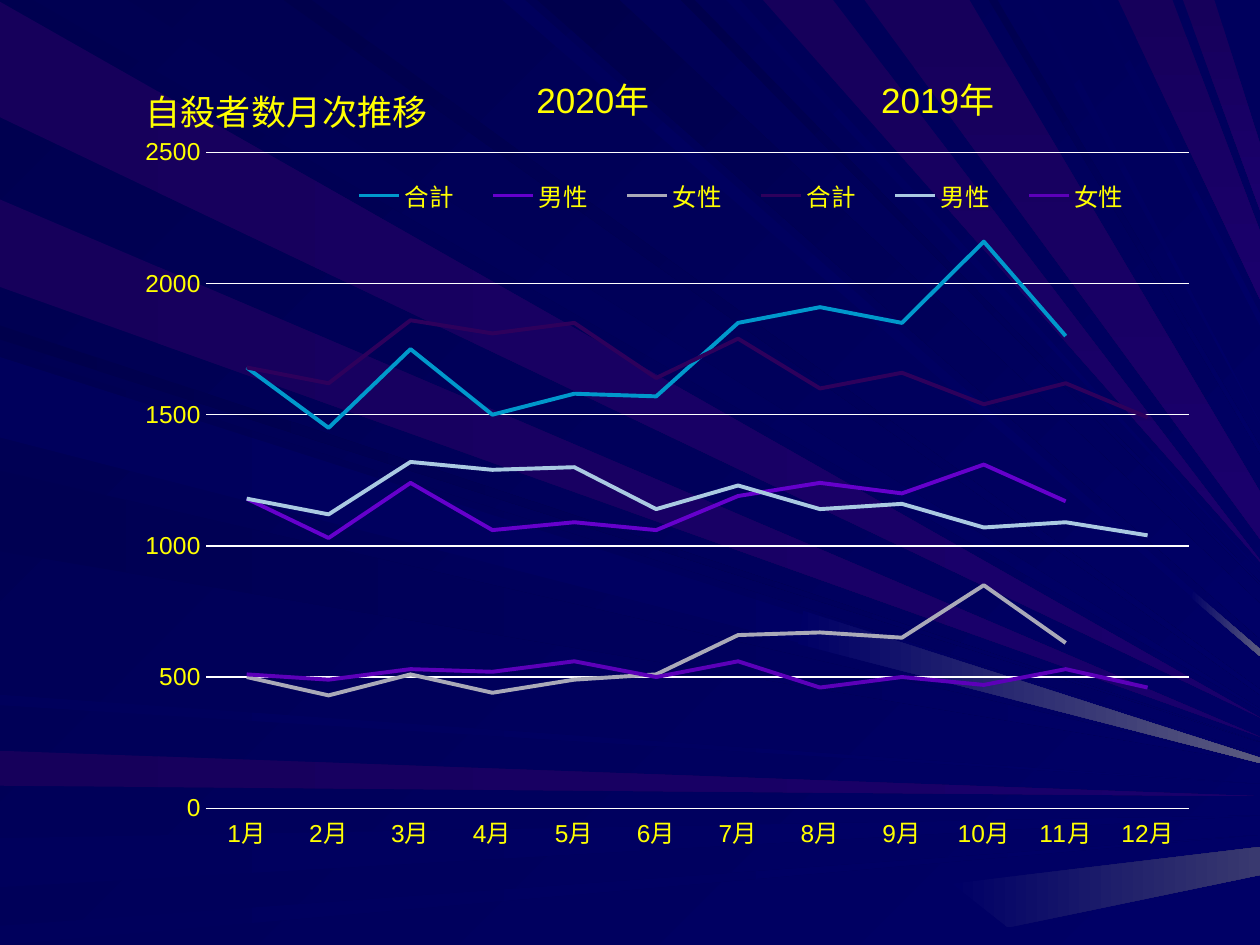
from lxml import etree
from pptx import Presentation
from pptx.chart.data import CategoryChartData
from pptx.dml.color import RGBColor
from pptx.enum.chart import XL_CHART_TYPE, XL_LEGEND_POSITION, XL_TICK_MARK
from pptx.enum.text import MSO_ANCHOR
from pptx.oxml import parse_xml
from pptx.oxml.ns import nsdecls, qn
from pptx.util import Pt

LINE_CHART = XL_CHART_TYPE.LINE
LEGEND_BOTTOM = XL_LEGEND_POSITION.BOTTOM
NO_TICK = XL_TICK_MARK.NONE
MIDDLE = MSO_ANCHOR.MIDDLE

WIDTH, HEIGHT = 720, 540
FONT = "Arial"
COLORS = {
    "text": "FFFF00", "grid": "FFFFFF", "night": "000050",
    "navy": "000066", "purple": "1A006C", "slate": "5A5A7F", "steel": "39396F",
    "dark navy": "00004C", "deep navy": "000052", "mid navy": "00005C",
    "dark purple": "16005B",
}

# Rays from the left edge: start colour, end colour, top, bottom, height of the tip
LEFT_RAYS = [
    ("dark purple", "purple", 1, 67, 410),
    ("dark purple", "purple", 429, 449, 455),
    ("mid navy", "navy", 479, 507, 466),
    ("mid navy", "navy", 529, 540, 477),
    ("dark navy", "navy", 186, 194, 424),
    ("dark purple", "purple", 114, 164, 421),
    ("deep navy", "navy", 200, 246, 431),
    ("deep navy", "navy", 269, 315, 436),
    ("mid navy", "navy", 397, 403, 448),
    ("mid navy", "navy", 204, 250, 435),
]
# Rays from the top edge: start colour, end colour, left, right, upper and lower tip
TOP_RAYS = [
    ("deep navy", "navy", 19, 73, 405, 406),
    ("mid navy", "navy", 287, 300, 371, 375),
    ("dark navy", "navy", 307, 354, 345, 365),
    ("dark navy", "navy", 389, 397, 333, 334),
    ("dark purple", "purple", 436, 476, 320, 321),
    ("dark purple", "purple", 639, 670, 132, 171),
    ("dark purple", "purple", 676, 694, 82, 120),
    ("dark navy", "navy", 162, 178, 394, 397),
    ("mid navy", "navy", 415, 423, 326, 327),
    ("dark purple", "purple", 494, 554, 281, 308),
    ("night", "navy", 565, 570, 255, 259),
    ("mid navy", "navy", 587, 593, 241, 242),
    ("mid navy", "navy", 623, 628, 179, 186),
]
# Pale ray ends: end colour, corners
GLINTS = [
    ("slate", [(459, 349), (456, 368), (WIDTH, 436), (WIDTH, 433)]),
    ("steel", [(544, 505), (576, 530), (WIDTH, 500), (WIDTH, 484)]),
    ("slate", [(682, 338), (680, 341), (WIDTH, 375), (WIDTH, 371)]),
]

TITLE = "自殺者数月次推移"
YEARS = [("2020年", 306.5), ("2019年", 503.5)]  # label, left edge
MONTHS = [f"{month}月" for month in range(1, 13)]
SERIES = [
    ("合計", "0099CC", [1680, 1450, 1750, 1500, 1580, 1570, 1850, 1910, 1850, 2160, 1800, None]),
    ("男性", "6600CC", [1180, 1030, 1240, 1060, 1090, 1060, 1190, 1240, 1200, 1310, 1170, None]),
    ("女性", "AAAAB8", [500, 430, 510, 440, 490, 510, 660, 670, 650, 850, 630, None]),
    ("合計", "2E005C", [1680, 1620, 1860, 1810, 1850, 1640, 1790, 1600, 1660, 1540, 1620, 1490]),
    ("男性", "AACAE2", [1180, 1120, 1320, 1290, 1300, 1140, 1230, 1140, 1160, 1070, 1090, 1040]),
    ("女性", "5C00B9", [510, 490, 530, 520, 560, 500, 560, 460, 500, 470, 530, 460]),
]
CHART_BOX = (41, 23, 638.6, 493.2)
LAYOUTS = {  # fractions of the chart box
    "c:title": {"x": 0.06, "y": 0.04},
    "c:legend": {"x": 0.23, "y": 0.15, "w": 0.74, "h": 0.06},
    "c:plotArea": {"x": 0.12, "y": 0.13, "w": 0.88, "h": 0.76},
}


def rgb(value):
    return RGBColor.from_string(value)


def set_font(font, size):
    font.name, font.size, font.bold = FONT, Pt(size), False
    font.color.rgb = rgb(COLORS["text"])


def set_gradient(fill, start, end, angle):
    """Fill from one named colour to another; the angle runs clockwise."""
    fill.gradient()
    fill.gradient_angle = (360 - angle) % 360
    for stop, name in zip(fill.gradient_stops, (start, end)):
        stop.color.rgb = rgb(COLORS[name])


def add_ray(slide, start, end, angle, corners):
    points = [(Pt(x), Pt(y)) for x, y in corners]
    builder = slide.shapes.build_freeform(*points[0])
    builder.add_line_segments(points[1:], close=True)
    ray = builder.convert_to_shape()
    ray.shadow.inherit = False
    ray.line.fill.background()
    set_gradient(ray.fill, start, end, angle)


def add_background(slide):
    set_gradient(slide.background.fill, "night", "navy", 45)
    for start, end, left, right, upper, lower in TOP_RAYS:
        corners = [(left, 0), (right, 0), (WIDTH, upper), (WIDTH, lower)]
        add_ray(slide, start, end, 90 if end == "purple" else 45, corners)
    for start, end, top, bottom, tip in LEFT_RAYS:
        add_ray(slide, start, end, 0, [(0, top), (0, bottom), (WIDTH, tip)])
    for end, corners in GLINTS:
        add_ray(slide, "navy", end, 0, corners)


def add_text(slide, text, left, top, width, height, size):
    box = slide.shapes.add_textbox(Pt(left), Pt(top), Pt(width), Pt(height))
    frame = box.text_frame
    frame.word_wrap = True
    frame.vertical_anchor = MIDDLE
    frame.margin_left = frame.margin_right = frame.margin_top = frame.margin_bottom = 0
    span = frame.paragraphs[0].add_run()
    span.text = text
    set_font(span.font, size)


def place_part(chart, tag, position):
    """Give a chart part a manual layout."""
    part = chart.element.xpath(f".//{tag}")[0]
    for old in part.findall(qn("c:layout")):
        part.remove(old)
    layout = parse_xml(f"<c:layout {nsdecls('c')}><c:manualLayout/></c:layout>")
    target = {"layoutTarget": "inner"} if tag == "c:plotArea" else {}
    for name, value in {**target, "xMode": "edge", "yMode": "edge", **position}.items():
        etree.SubElement(layout[0], qn(f"c:{name}")).set("val", str(value))
    overlay = part.find(qn("c:overlay"))
    if overlay is None:
        part.insert(0, layout)
    else:
        overlay.addprevious(layout)


def add_line_chart(slide):
    data = CategoryChartData()
    data.categories = MONTHS
    for name, _, values in SERIES:
        data.add_series(name, values)
    chart = slide.shapes.add_chart(LINE_CHART, *map(Pt, CHART_BOX), data).chart
    set_font(chart.font, 14)

    chart.has_title = True
    span = chart.chart_title.text_frame.paragraphs[0].add_run()
    span.text = TITLE
    set_font(span.font, 20)
    chart.has_legend = True
    chart.legend.position = LEGEND_BOTTOM
    chart.legend.include_in_layout = False
    set_font(chart.legend.font, 14)

    months, counts = chart.category_axis, chart.value_axis
    for axis in (months, counts):
        axis.major_tick_mark = axis.minor_tick_mark = NO_TICK
        set_font(axis.tick_labels.font, 14)
    counts.minimum_scale, counts.maximum_scale, counts.major_unit = 0, 2500, 500
    counts.format.line.fill.background()
    for line in (months.format.line, counts.major_gridlines.format.line):
        line.color.rgb = rgb(COLORS["grid"])
        line.width = Pt(0.75)

    chart.plots[0].vary_by_categories = False
    for series, (_, color, _) in zip(chart.plots[0].series, SERIES):
        series.smooth = False
        series.format.line.color.rgb = rgb(color)
        series.format.line.width = Pt(2.25)
    for tag, position in LAYOUTS.items():
        place_part(chart, tag, position)


def main():
    deck = Presentation()
    deck.slide_width, deck.slide_height = Pt(WIDTH), Pt(HEIGHT)
    slide = deck.slides.add_slide(deck.slide_layouts[6])
    add_background(slide)
    add_line_chart(slide)
    for year, left in YEARS:
        add_text(slide, year, left, top=45, width=90, height=24, size=20)
    deck.save("out.pptx")


if __name__ == "__main__":
    main()
